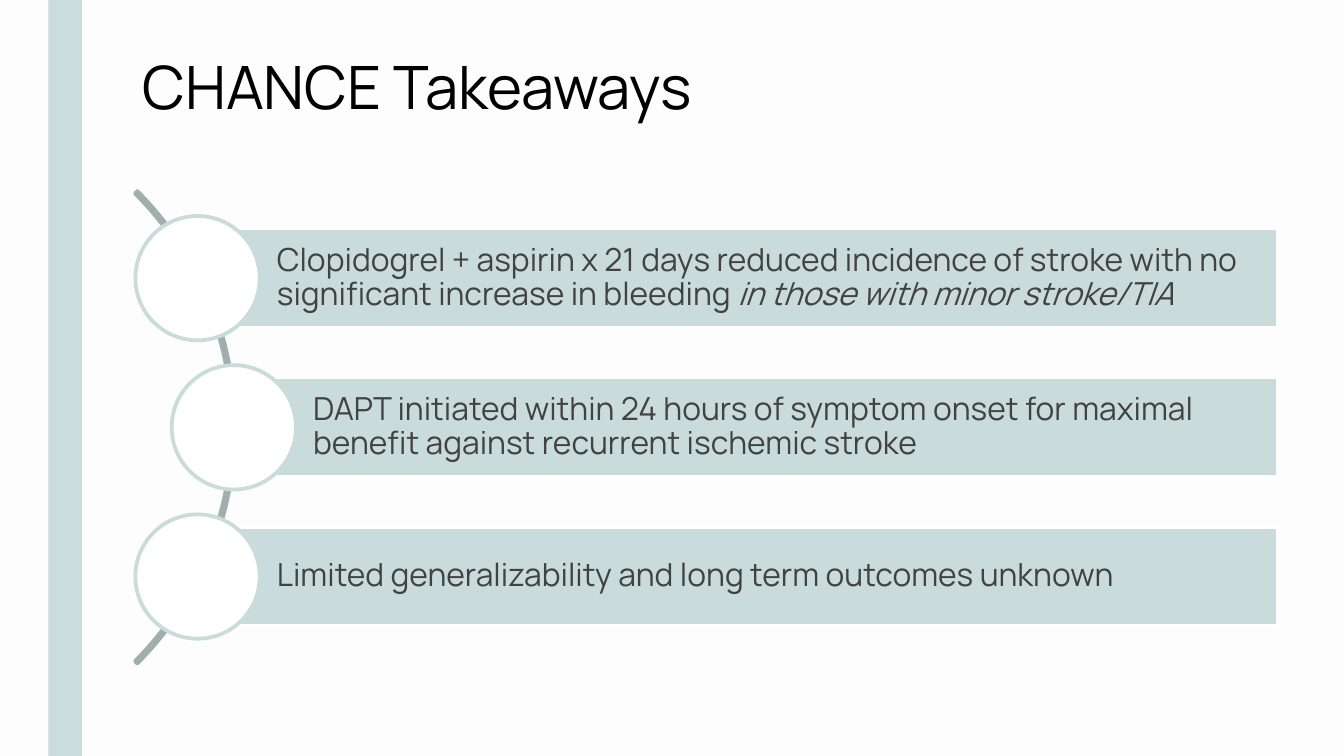
from dataclasses import dataclass

from pptx import Presentation
from pptx.dml.color import RGBColor
from pptx.enum import shapes, text
from pptx.util import Inches, Pt


@dataclass(frozen=True)
class Theme:
    """Colours, font and type sizes of the deck."""
    background: str = "FDFDFD"
    sidebar: str = "CADCDC"
    bar: str = "CADBDB"
    arc: str = "A0AEAE"
    white: str = "FFFFFF"
    heading: str = "000000"
    body: str = "424242"
    font: str = "Manrope"
    title_size: int = 32
    body_size: int = 17
    line_width: int = 2


THEME = Theme()
TAKEAWAYS = [
    [("Clopidogrel + aspirin x 21 days reduced incidence of stroke with no "
      "significant increase in bleeding ", False),
     ("in those with minor stroke/TIA", True)],
    [("DAPT initiated within 24 hours of symptom onset for maximal "
      "benefit against recurrent ischemic stroke", False)],
    [("Limited generalizability and long term outcomes unknown", False)],
]


def add_figure(page, kind, box, fill, line=None):
    """Add a flat preset shape with a solid fill and an optional outline."""
    figure = page.shapes.add_shape(kind, *(Inches(length) for length in box))
    figure.shadow.inherit = False
    figure.fill.solid()
    figure.fill.fore_color.rgb = RGBColor.from_string(fill)
    if line:
        figure.line.color.rgb = RGBColor.from_string(line)
        figure.line.width = Pt(THEME.line_width)
    else:
        figure.line.fill.background()
    return figure


def set_frame(frame, insets, anchor):
    """Set wrapping, insets and vertical anchor of a text frame."""
    frame.word_wrap = True
    frame.auto_size = text.MSO_AUTO_SIZE.NONE
    frame.vertical_anchor = anchor
    (frame.margin_left, frame.margin_top, frame.margin_right,
     frame.margin_bottom) = (Inches(inset) for inset in insets)


def add_span(para, words, size, color, italic=False):
    """Append one formatted run to a paragraph."""
    span = para.add_run()
    span.text = words
    span.font.name = THEME.font
    span.font.size = Pt(size)
    span.font.italic = italic
    span.font.color.rgb = RGBColor.from_string(color)


def add_title(page, box, words):
    """Place the slide heading in the title placeholder."""
    title = page.shapes.title
    title.left, title.top, title.width, title.height = (
        Inches(length) for length in box)
    set_frame(title.text_frame, (0.1, 0.05, 0.1, 0.05), text.MSO_ANCHOR.TOP)
    para = title.text_frame.paragraphs[0]
    para.alignment = text.PP_ALIGN.LEFT
    add_span(para, words, THEME.title_size, THEME.heading)


def add_takeaway(page, box, spans):
    """Draw a text bar with a circle centred on its left edge."""
    left, top, width, height = box
    bar = add_figure(page, shapes.MSO_SHAPE.RECTANGLE, box, THEME.bar, THEME.white)
    set_frame(bar.text_frame, (0.59, 0.05, 0.05, 0.05), text.MSO_ANCHOR.MIDDLE)
    para = bar.text_frame.paragraphs[0]
    para.alignment = text.PP_ALIGN.LEFT
    para.line_spacing = 0.9
    for words, italic in spans:
        add_span(para, words, THEME.body_size, THEME.body, italic)
    size = height * 1.25
    add_figure(page, shapes.MSO_SHAPE.OVAL,
               (left - size / 2, top + (height - size) / 2, size, size),
               THEME.white, THEME.bar)


def add_curved_list(page, box, items):
    """Draw the arc and the evenly spaced bars that follow it."""
    left, top, width, height = box
    bar_height, indent, diameter = 0.74, 0.27, 4.97
    arc = add_figure(page, shapes.MSO_SHAPE.BLOCK_ARC,
                     (left - 4.69, top + (height - diameter) / 2, diameter, diameter),
                     THEME.arc, THEME.arc)
    for index, value in enumerate((189, 27, 0.005)):
        arc.adjustments[index] = value
    pitch = (height - bar_height) / (len(items) - 1)
    for index, spans in enumerate(items):
        shift = indent * (index % 2)
        add_takeaway(page, (left + shift, top + index * pitch,
                            width - shift, bar_height), spans)


def main():
    """Build and save the deck."""
    deck = Presentation()
    deck.slide_width = Inches(10)
    deck.slide_height = deck.slide_width * 9 // 16
    page = deck.slides.add_slide(deck.slide_layouts[5])
    page.background.fill.solid()
    page.background.fill.fore_color.rgb = RGBColor.from_string(THEME.background)
    add_figure(page, shapes.MSO_SHAPE.RECTANGLE, (0.36, -0.05, 0.25, 5.73), THEME.sidebar)
    add_title(page, (0.96, 0.32, 7.06, 0.64), "CHANCE Takeaways")
    add_curved_list(page, (1.47, 1.7, 8.04, 2.96), TAKEAWAYS)
    deck.save("out.pptx")


if __name__ == "__main__":
    main()
